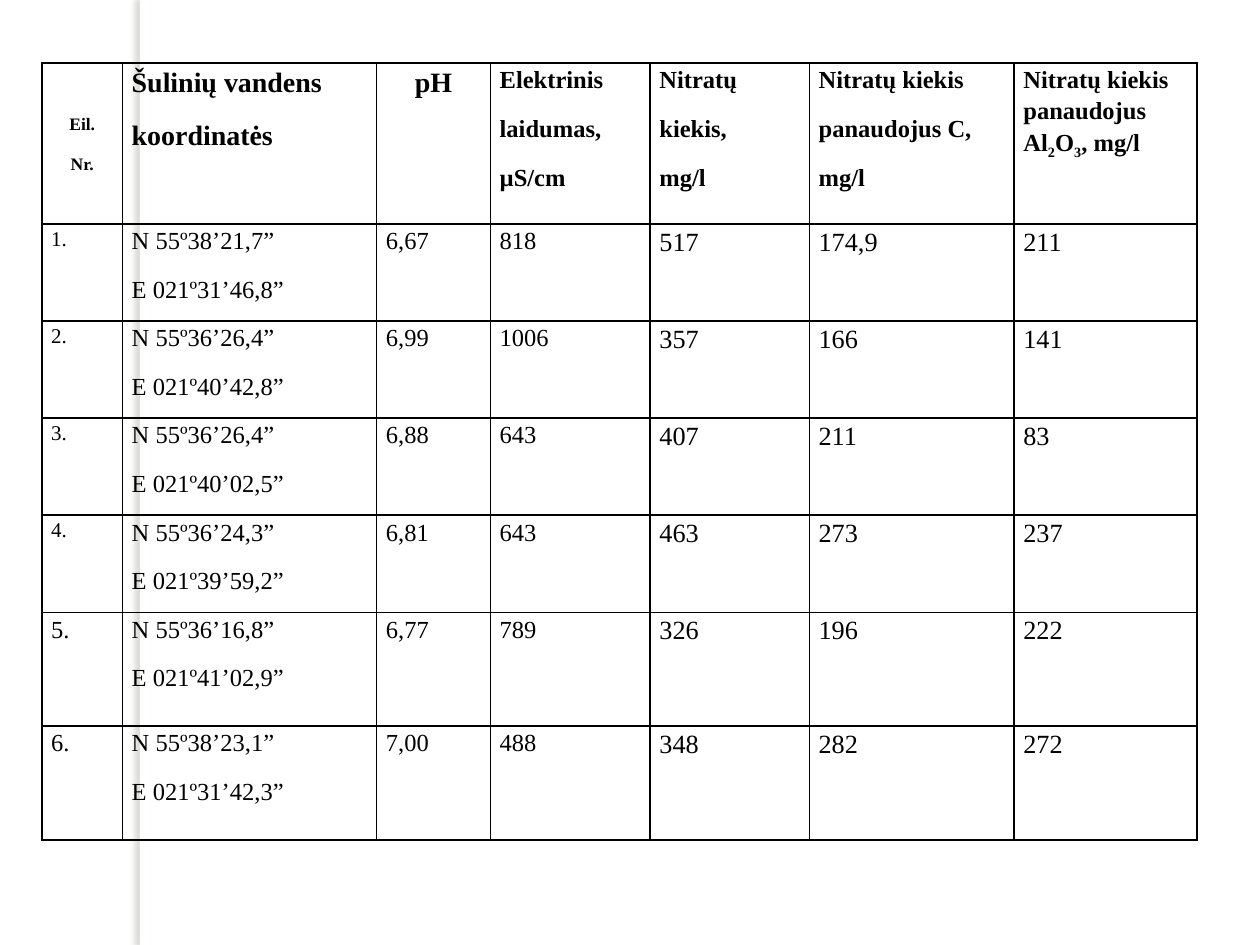
from dataclasses import dataclass

from lxml.etree import SubElement
from pptx import Presentation
from pptx.dml.color import RGBColor
from pptx.enum.shapes import MSO_SHAPE as Shape
from pptx.enum.text import MSO_ANCHOR as Anchor, PP_ALIGN as Align
from pptx.oxml.ns import qn
from pptx.util import Pt

BLACK = RGBColor(0x00, 0x00, 0x00)
WHITE = RGBColor(0xFF, 0xFF, 0xFF)
SHADOW = RGBColor(0x73, 0x6F, 0x63)
FONT = "Times New Roman"

COLUMN_WIDTHS = [46, 145.3, 65, 91.3, 91, 117, 104.4]
ROW_HEIGHTS = [92] + [55.5] * 4 + [65] * 2


@dataclass
class Span:
    text: str
    subscript: bool = False


@dataclass
class CellText:
    lines: list[list[Span]]
    size: float
    bold: bool = False
    align: Align = Align.LEFT
    anchor: Anchor = Anchor.TOP


@dataclass
class Well:
    north: str
    east: str
    ph: str
    conductivity: str
    nitrates: list[str]  # untreated, with C, with Al2O3


def lines(*texts: str) -> list[list[Span]]:
    return [[Span(text)] for text in texts]


HEADERS = [
    CellText(lines("Eil.", "Nr."), 10, True, Align.CENTER, Anchor.MIDDLE),
    CellText(lines("Šulinių vandens", "koordinatės"), 16, True),
    CellText(lines("pH"), 16, True, Align.CENTER),
    CellText(lines("Elektrinis", "laidumas,", "µS/cm"), 14, True),
    CellText(lines("Nitratų", "kiekis,", "mg/l"), 14, True),
    CellText(lines("Nitratų kiekis", "panaudojus C,", "mg/l"), 14, True),
    CellText([[Span("Nitratų kiekis panaudojus Al"), Span("2", True), Span("O"),
               Span("3", True), Span(", mg/l")]], 14, True),
]

WELLS = [
    Well("N 55º38’21,7”", "E 021º31’46,8”", "6,67", "818", ["517", "174,9", "211"]),
    Well("N 55º36’26,4”", "E 021º40’42,8”", "6,99", "1006", ["357", "166", "141"]),
    Well("N 55º36’26,4”", "E 021º40’02,5”", "6,88", "643", ["407", "211", "83"]),
    Well("N 55º36’24,3”", "E 021º39’59,2”", "6,81", "643", ["463", "273", "237"]),
    Well("N 55º36’16,8”", "E 021º41’02,9”", "6,77", "789", ["326", "196", "222"]),
    Well("N 55º38’23,1”", "E 021º31’42,3”", "7,00", "488", ["348", "282", "272"]),
]


def well_row(number: int, well: Well) -> list[CellText]:
    return [
        CellText(lines(f"{number}."), 12 if number <= 4 else 14),
        CellText(lines(well.north, well.east), 14),
        CellText(lines(well.ph), 14),
        CellText(lines(well.conductivity), 14),
        *(CellText(lines(value), 15) for value in well.nitrates),
    ]


def add_band(page) -> None:
    """White vertical strip with a soft shadow to its left."""
    band = page.shapes.add_shape(Shape.RECTANGLE, Pt(80), Pt(0), Pt(5.8), Pt(540))
    band.fill.solid()
    band.fill.fore_color.rgb = WHITE
    band.line.fill.background()
    band.shadow.inherit = False
    effects = band._element.spPr.find(qn("a:effectLst"))
    shadow = SubElement(effects, qn("a:outerShdw"), blurRad=str(Pt(3)), dist=str(Pt(3)),
                        dir="10800000", algn="ctr", rotWithShape="0")
    color = SubElement(shadow, qn("a:srgbClr"), val=str(SHADOW))
    SubElement(color, qn("a:alpha"), val="25000")


def set_borders(cell) -> None:
    properties = cell._tc.get_or_add_tcPr()
    for side in ("a:lnL", "a:lnR", "a:lnT", "a:lnB"):
        border = SubElement(properties, qn(side), w=str(Pt(1)))
        fill = SubElement(border, qn("a:solidFill"))
        SubElement(fill, qn("a:srgbClr"), val=str(BLACK))


def fill_cell(cell, content: CellText) -> None:
    set_borders(cell)
    cell.fill.background()
    cell.margin_left = cell.margin_right = Pt(5.3)
    cell.margin_top = cell.margin_bottom = Pt(0)
    cell.vertical_anchor = content.anchor
    frame = cell.text_frame
    for index, line in enumerate(content.lines):
        para = frame.add_paragraph() if index else frame.paragraphs[0]
        para.alignment = content.align
        para.line_spacing = 1.15
        para.space_after = Pt(10)
        for part in line:
            span = para.add_run()
            span.text = part.text
            span.font.name = FONT
            span.font.size = Pt(content.size)
            span.font.bold = content.bold
            span.font.color.rgb = BLACK
            if part.subscript:
                span._r.get_or_add_rPr().set("baseline", "-25000")


def add_wells_table(page) -> None:
    rows = [HEADERS] + [well_row(number, well) for number, well in enumerate(WELLS, 1)]
    table = page.shapes.add_table(
        len(rows), len(HEADERS), Pt(24), Pt(36),
        Pt(sum(COLUMN_WIDTHS)), Pt(sum(ROW_HEIGHTS))).table
    table.first_row = table.horz_banding = False
    for column, width in zip(table.columns, COLUMN_WIDTHS):
        column.width = Pt(width)
    for table_row, height, contents in zip(table.rows, ROW_HEIGHTS, rows):
        table_row.height = Pt(height)
        for cell, content in zip(table_row.cells, contents):
            fill_cell(cell, content)


def main() -> None:
    deck = Presentation()
    deck.slide_width, deck.slide_height = Pt(720), Pt(540)
    page = deck.slides.add_slide(deck.slide_layouts[6])  # blank: the slide has no title
    page.background.fill.solid()
    page.background.fill.fore_color.rgb = WHITE
    add_band(page)
    add_wells_table(page)
    deck.save("out.pptx")


if __name__ == "__main__":
    main()
